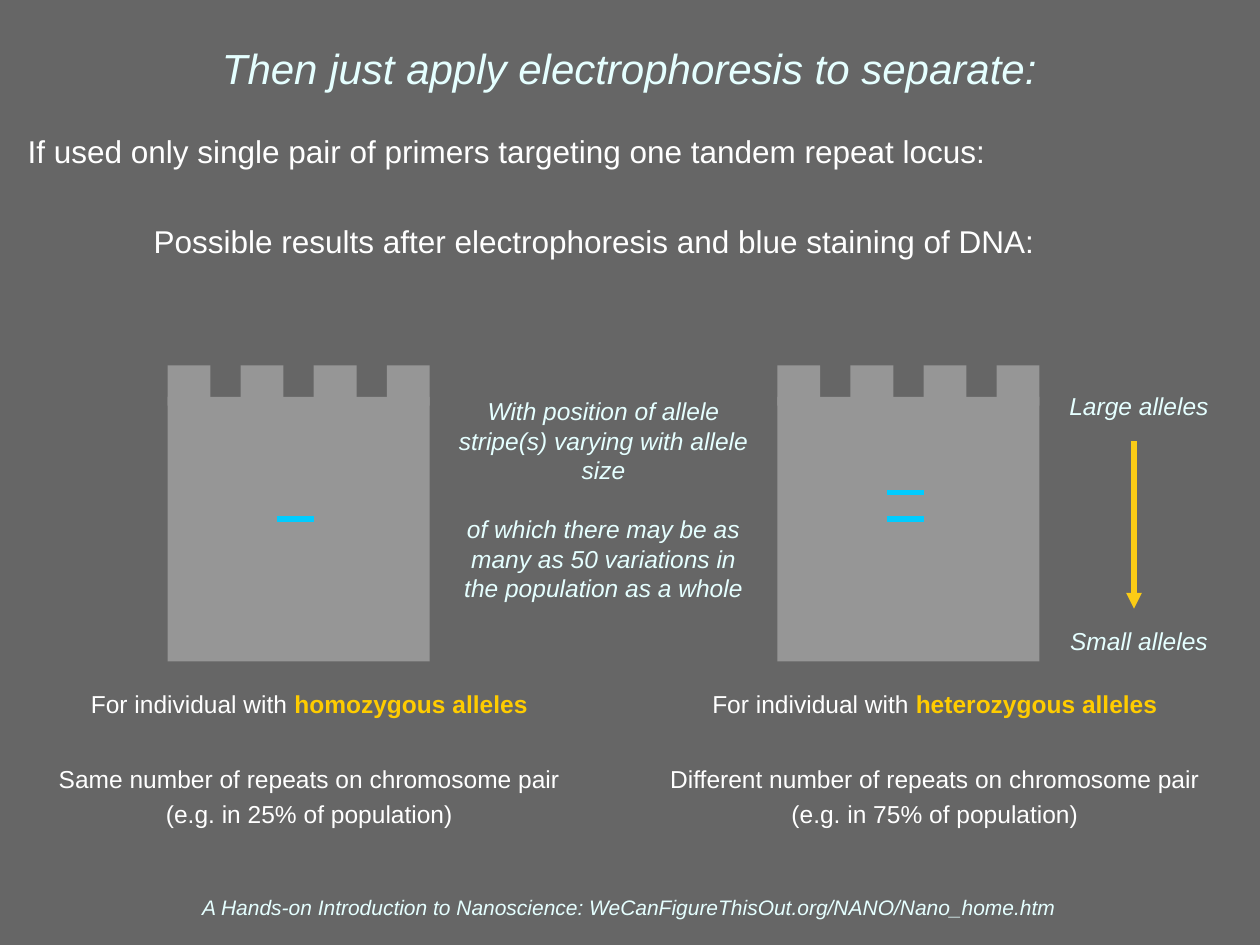
from lxml import etree
from pptx import Presentation
from pptx import util as u
from pptx.dml.color import RGBColor
from pptx.enum import shapes, text
from pptx.oxml.ns import qn

Inches, Pt = u.Inches, u.Pt
COLORS = {"back": "666666", "pale": "E5FFFF", "white": "FFFFFF", "gold": "FFCC00",
          "gel": "969696", "band": "00CCFF", "arrow": "FBCC16"}
MID = text.PP_ALIGN.CENTER
TOP, CENTER, BASE = (text.MSO_ANCHOR.TOP, text.MSO_ANCHOR.MIDDLE,
                     text.MSO_ANCHOR.BOTTOM)


def color(name):
    """Return the named colour."""
    return RGBColor.from_string(COLORS[name])


def fill_text(shape, box, paras, size, hue, italic=False, anchor=TOP, align=MID):
    """Place a text shape; paras holds (runs, space before), a run is (words, accent)."""
    shape.left, shape.top, shape.width, shape.height = map(Inches, box)
    frame = shape.text_frame
    frame.word_wrap = True
    frame.auto_size = text.MSO_AUTO_SIZE.NONE
    frame.vertical_anchor = anchor
    frame.margin_left = frame.margin_right = Inches(0.05)
    frame.margin_top = frame.margin_bottom = Inches(0.05)
    for i, (runs, gap) in enumerate(paras):
        para = frame.add_paragraph() if i else frame.paragraphs[0]
        para.alignment = align
        para.space_before = Pt(gap)
        font = para.font
        font.name, font.size, font.italic = "Arial", Pt(size), italic
        font.color.rgb = color(hue)
        for words, accent in runs:
            run = para.add_run()
            run.text = words
            if accent:
                run.font.bold = True
                run.font.color.rgb = color("gold")
    return frame


def add_text(slide, box, *args, **opts):
    """Add a text box in the given box."""
    return fill_text(slide.shapes.add_textbox(0, 0, 0, 0), box, *args, **opts)


def add_line(parent, start, end, hue):
    """Add a straight line three points wide."""
    line = parent.add_connector(shapes.MSO_CONNECTOR.STRAIGHT,
                                *map(Inches, start + end))
    line.line.color.rgb = color(hue)
    line.line.width = Pt(3)
    etree.SubElement(line._element.spPr, qn("a:effectLst"))
    return line


def add_block(parent, *box):
    """Add a plain gel rectangle."""
    block = parent.add_shape(shapes.MSO_SHAPE.RECTANGLE, *map(Inches, box))
    block.shadow.inherit = False
    block.fill.solid()
    block.fill.fore_color.rgb = color("gel")
    block.line.fill.background()


def add_gel(slide, box, bands):
    """Draw a gel slab with four teeth and stained bands at the given depths."""
    left, top, width, height = box
    group = slide.shapes.add_group_shape().shapes
    tooth, count = 0.34, 4
    step = (width - tooth) / (count - 1)
    add_block(group, left, top + 0.25, width, height - 0.25)
    for i in range(count):
        add_block(group, left + i * step, top, tooth, 0.32)
    for depth in bands:
        add_line(group, (left + 0.87, top + depth), (left + 1.16, top + depth), "band")


def add_caption(slide, box, kind, repeats, share):
    """Describe the individual below a gel."""
    add_text(slide, box, [
        ([("For individual with ", False), (f"{kind} alleles", True)], 0),
        ([(f"{repeats} number of repeats on chromosome pair", False)], 26),
        ([(f"(e.g. in {share} of population)", False)], 3)], 14, "white")


def add_scale(slide, box):
    """Show the allele size scale with its downward arrow."""
    left, top, width, height = box
    add_text(slide, box, [([("Large alleles", False)], 0),
                          ([("Small alleles", False)], 117.5)],
             14, "pale", italic=True, anchor=BASE)
    mid = left + 0.67
    arrow = add_line(slide.shapes, (mid, top + 0.34), (mid, top + 1.67), "arrow")
    etree.SubElement(arrow.line._get_or_add_ln(), qn("a:tailEnd"), type="triangle")


def add_intro(slide, box):
    """Write the two opening statements, the second one indented."""
    frame = add_text(slide, box, [
        ([("If used only single pair of primers targeting one tandem repeat locus:",
           False)], 0),
        ([("Possible results after electrophoresis and blue staining of DNA:",
           False)], 29.7)], 18, "white", align=text.PP_ALIGN.LEFT)
    frame.paragraphs[1]._p.get_or_add_pPr().set("marL", str(Inches(1)))


def add_note(slide, box):
    """Write the note between the gels."""
    add_text(slide, box, [
        ([("With position of allele stripe(s) varying with allele size", False)], 0),
        ([("of which there may be as many as 50 variations in the population as a whole",
           False)], 16.8)], 14, "pale", italic=True, anchor=BASE)


def main():
    """Build and save the slide."""
    deck = Presentation()
    deck.slide_width, deck.slide_height = Inches(10), Inches(7.5)
    slide = deck.slides.add_slide(deck.slide_layouts[5])
    slide.background.fill.solid()
    slide.background.fill.fore_color.rgb = color("back")
    fill_text(slide.shapes.title, (0.33, 0.08, 9.33, 0.92),
              [([("Then just apply electrophoresis to separate:", False)], 0)],
              24, "pale", italic=True, anchor=CENTER)
    add_intro(slide, (0.17, 1, 9.58, 1.92))
    add_gel(slide, (1.33, 2.9, 2.08, 2.35), [1.22])
    add_gel(slide, (6.17, 2.9, 2.08, 2.35), [1.22, 1.01])
    add_caption(slide, (0.33, 5.42, 4.25, 1.17), "homozygous", "Same", "25%")
    add_caption(slide, (5.17, 5.42, 4.5, 1.17), "heterozygous", "Different", "75%")
    add_note(slide, (3.58, 3.18, 2.42, 1.65))
    add_scale(slide, (8.33, 3.16, 1.42, 2.09))
    add_text(slide, (0.33, 7.06, 9.33, 0.29),
             [([("A Hands-on Introduction to Nanoscience: "
                 "WeCanFigureThisOut.org/NANO/Nano_home.htm", False)], 0)],
             12, "pale", italic=True, anchor=BASE)
    deck.save("out.pptx")


if __name__ == "__main__":
    main()
